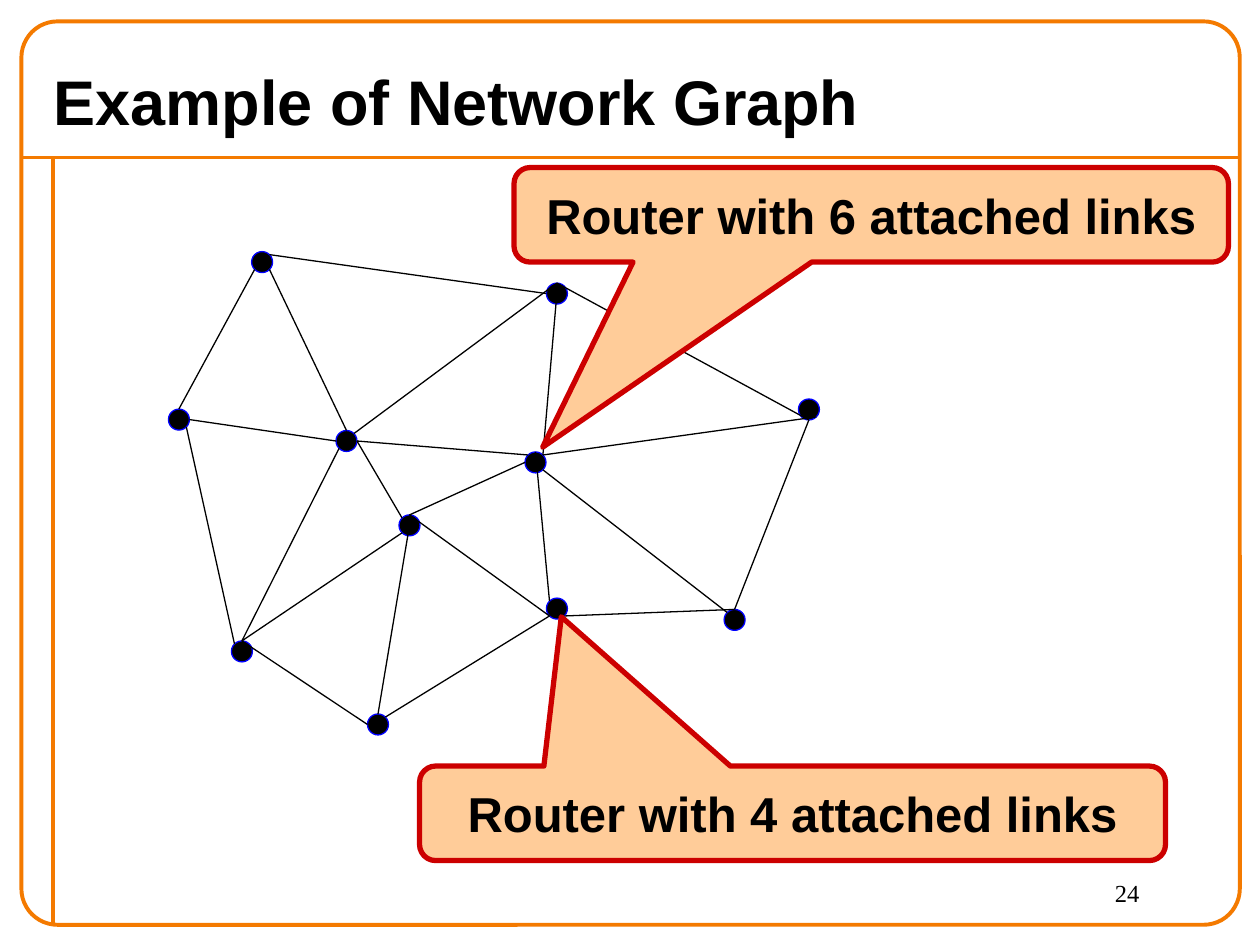
from math import sqrt

from lxml.etree import SubElement
from pptx import Presentation
from pptx.dml.color import RGBColor
from pptx.enum.shapes import MSO_CONNECTOR, MSO_SHAPE
from pptx.enum.text import MSO_ANCHOR, PP_ALIGN
from pptx.oxml.ns import qn
from pptx.util import Inches, Pt

ORANGE = RGBColor(0xF4, 0x7A, 0x00)
BLACK = RGBColor(0x00, 0x00, 0x00)
BLUE = RGBColor(0x00, 0x00, 0xFF)
PEACH = RGBColor(0xFF, 0xCC, 0x99)
RED = RGBColor(0xCC, 0x00, 0x00)

RADIUS = 1 / 12
DIAGONAL = RADIUS / sqrt(2)
PORTS = {
    "C": (0, 0),
    "N": (0, -RADIUS), "S": (0, RADIUS), "E": (RADIUS, 0), "W": (-RADIUS, 0),
    "NE": (DIAGONAL, -DIAGONAL), "NW": (-DIAGONAL, -DIAGONAL),
    "SE": (DIAGONAL, DIAGONAL), "SW": (-DIAGONAL, DIAGONAL),
}

ROUTERS = {
    "a": (2.08, 2.08), "b": (1.42, 3.33), "c": (4.42, 2.33), "d": (4.42, 4.83),
    "e": (3, 5.75), "f": (2.75, 3.5), "g": (6.42, 3.25), "h": (3.25, 4.17),
    "i": (1.92, 5.17), "j": (4.25, 3.67), "k": (5.83, 4.92),
}

LINKS = [
    ("a", "SE", "f", "N"), ("a", "SW", "b", "N"), ("b", "SE", "i", "NW"),
    ("f", "E", "h", "NW"), ("j", "SE", "k", "NW"), ("c", "C", "j", "NE"),
    ("c", "N", "g", "S"), ("g", "S", "k", "N"), ("i", "N", "e", "W"),
    ("h", "N", "d", "SW"), ("k", "N", "d", "SE"), ("j", "N", "d", "NW"),
    ("h", "C", "e", "N"), ("f", "E", "j", "NW"), ("b", "E", "f", "W"),
    ("i", "N", "h", "SW"), ("e", "NE", "d", "SW"), ("i", "N", "f", "SW"),
    ("h", "N", "j", "W"), ("j", "NE", "g", "SE"), ("a", "NE", "c", "W"),
    ("f", "NE", "c", "N"),
]


def write_text(frame, text, size, font="Arial", bold=False,
               align=PP_ALIGN.LEFT, anchor=MSO_ANCHOR.TOP, wrap=True):
    frame.word_wrap = wrap
    frame.vertical_anchor = anchor
    paragraph = frame.paragraphs[0]
    paragraph.alignment = align
    run = paragraph.add_run()
    run.text = text
    run.font.size = Pt(size)
    run.font.name = font
    run.font.bold = bold
    run.font.color.rgb = BLACK


def add_label(slide, box, text, **text_format):
    label = slide.shapes.add_textbox(*map(Inches, box))
    write_text(label.text_frame, text, **text_format)


def add_line(slide, start, end, color, width):
    line = slide.shapes.add_connector(
        MSO_CONNECTOR.STRAIGHT, *map(Inches, (*start, *end)))
    line.line.color.rgb = color
    line.line.width = Pt(width)
    SubElement(line._element.spPr, qn("a:effectLst"))


def add_outlined(slide, preset, box, color, width, fill=None, adjustments=()):
    shape = slide.shapes.add_shape(preset, *map(Inches, box))
    shape.shadow.inherit = False
    for index, value in enumerate(adjustments):
        shape.adjustments[index] = value
    if fill is None:
        shape.fill.background()
    else:
        shape.fill.solid()
        shape.fill.fore_color.rgb = fill
    shape.line.color.rgb = color
    shape.line.width = Pt(width)
    return shape


def add_frame(slide):
    add_line(slide, (0.17, 1.25), (9.83, 1.25), ORANGE, 2.25)
    add_line(slide, (0.42, 1.25), (0.42, 7.33), ORANGE, 2.25)
    add_outlined(slide, MSO_SHAPE.ROUNDED_RECTANGLE, (0.17, 0.17, 9.67, 7.17),
                 ORANGE, 2.25, adjustments=[0.04])


def add_router(slide, center):
    x, y = center
    add_outlined(slide, MSO_SHAPE.OVAL,
                 (x - RADIUS, y - RADIUS, 2 * RADIUS, 2 * RADIUS),
                 BLUE, 0.75, fill=BLACK)


def port_position(router, port):
    (x, y), (dx, dy) = ROUTERS[router], PORTS[port]
    return x + dx, y + dy


def add_callout(slide, box, text, pointer):
    callout = add_outlined(slide, MSO_SHAPE.ROUNDED_RECTANGULAR_CALLOUT, box,
                           RED, 3, fill=PEACH, adjustments=(*pointer, 0.17))
    write_text(callout.text_frame, text, size=28, bold=True,
               align=PP_ALIGN.CENTER, anchor=MSO_ANCHOR.MIDDLE, wrap=False)


def main():
    deck = Presentation()
    deck.slide_width, deck.slide_height = Inches(10), Inches(7.5)
    slide = deck.slides.add_slide(deck.slide_layouts[6])

    add_frame(slide)
    add_label(slide, (0.33, 0.42, 8.82, 0.75), "Example of Network Graph",
              size=36, bold=True, anchor=MSO_ANCHOR.MIDDLE)
    add_label(slide, (8.75, 6.92, 1, 0.42), "24",
              size=14, font="Times New Roman")

    for center in ROUTERS.values():
        add_router(slide, center)
    for source, source_port, target, target_port in LINKS:
        add_line(slide, port_position(source, source_port),
                 port_position(target, target_port), BLACK, 0.75)

    add_callout(slide, (4.08, 1.33, 5.67, 0.75),
                "Router with 6 attached links", (-0.46, 2.46))
    add_callout(slide, (3.33, 6.08, 5.92, 0.75),
                "Router with 4 attached links", (-0.31, -2.08))

    deck.save("out.pptx")


if __name__ == "__main__":
    main()
